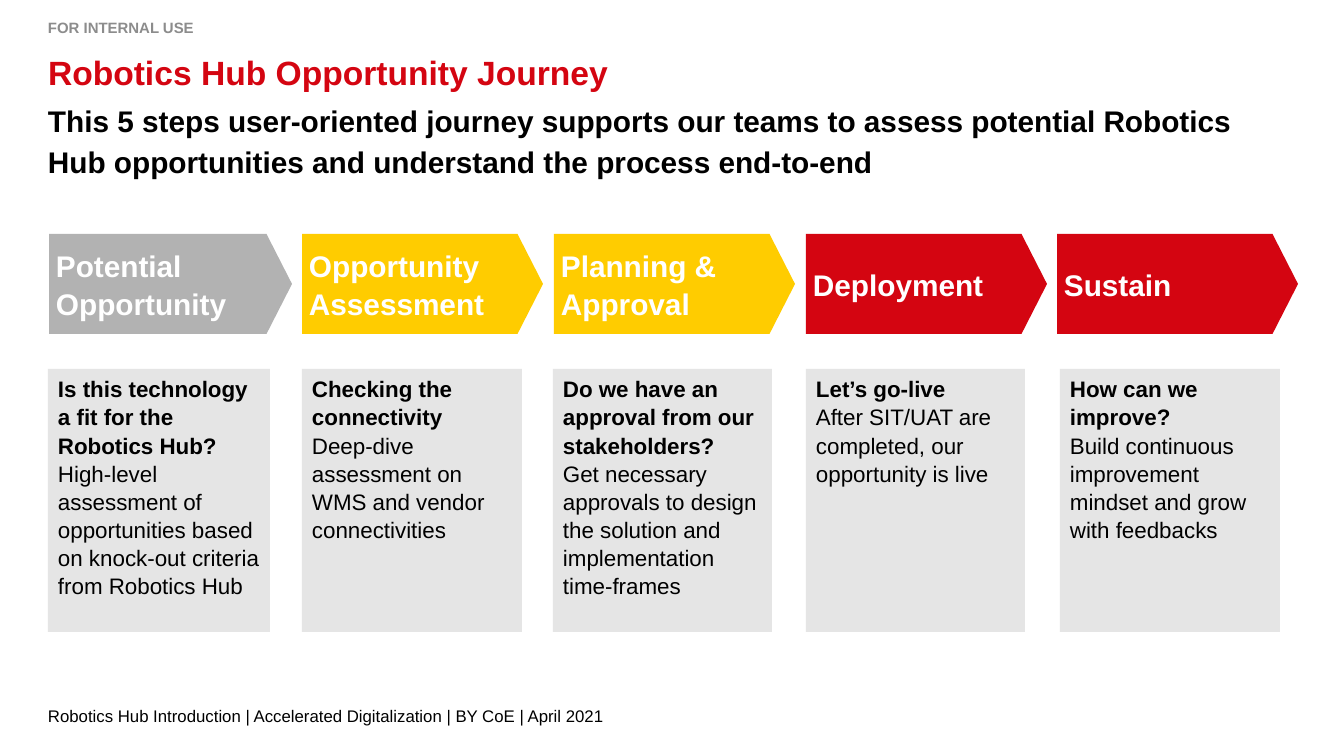
from pptx import Presentation
from pptx.dml.color import RGBColor
from pptx.enum.shapes import MSO_SHAPE
from pptx.enum.text import MSO_ANCHOR, MSO_AUTO_SIZE, PP_ALIGN
from pptx.util import Pt

RECTANGLE, PENTAGON = MSO_SHAPE.RECTANGLE, MSO_SHAPE.PENTAGON
TOP, MIDDLE = MSO_ANCHOR.TOP, MSO_ANCHOR.MIDDLE
LEFT = PP_ALIGN.LEFT
NO_FIT = MSO_AUTO_SIZE.NONE

PX = 914400 / 100.8
COLOURS = {
    "red": "D40511",
    "yellow": "FFCC00",
    "grey": "B2B2B2",
    "card": "E5E5E5",
    "tag": "8C8C8C",
    "black": "000000",
    "white": "FFFFFF",
}


def px(length):
    return round(length * PX)


def write(box, lines, size, colour, anchor=TOP, inset=(0, 0), spacing=1.0, wrap=True):
    """Fill a box with (text, bold) lines, one paragraph each."""
    frame = box.text_frame
    side, end = map(px, inset)
    frame_format = {
        "word_wrap": wrap,
        "auto_size": NO_FIT,
        "vertical_anchor": anchor,
        "margin_left": side,
        "margin_right": side,
        "margin_top": end,
        "margin_bottom": end,
    }
    for name, value in frame_format.items():
        setattr(frame, name, value)
    for index, (text, bold) in enumerate(lines):
        para = frame.paragraphs[0] if index == 0 else frame.add_paragraph()
        para.alignment = LEFT
        para.line_spacing = spacing
        span = para.add_run()
        span.text = text
        font_format = {"name": "Arial", "size": Pt(size), "bold": bold}
        for name, value in font_format.items():
            setattr(span.font, name, value)
        span.font.color.rgb = RGBColor.from_string(COLOURS[colour])


deck = Presentation()
deck.slide_width, deck.slide_height = px(1344), px(756)
page = deck.slides.add_slide(deck.slide_layouts[5])

# Title
title = page.shapes.title
title_place = {"left": 48, "top": 52, "width": 1249, "height": 73}
for name, value in title_place.items():
    setattr(title, name, px(value))
write(title, [("Robotics Hub Opportunity Journey", True)], 24, "red")

# Tag, subtitle and footer: place, text, bold, format
texts = [
    ((48, 17, 402, 21), "FOR INTERNAL USE", True,
     {"size": 10.7, "colour": "tag", "anchor": MIDDLE, "wrap": False}),
    ((48, 98, 1247, 52),
     "This 5 steps user-oriented journey supports our teams to assess potential "
     "Robotics Hub opportunities and understand the process end-to-end", True,
     {"size": 21.3, "colour": "black", "spacing": 1.14}),
    ((48, 706, 1193, 20),
     "Robotics Hub Introduction | Accelerated Digitalization | BY CoE | April 2021", False,
     {"size": 12, "colour": "black", "anchor": MIDDLE}),
]
for place, text, bold, text_format in texts:
    box = page.shapes.add_textbox(*map(px, place))
    write(box, [(text, bold)], **text_format)

# Journey steps: arrow (left, width), card (left, width), colour, name lines, question, answer
steps = [
    ((49, 243), (48, 222), "grey", ["Potential Opportunity"],
     "Is this technology a fit for the Robotics Hub?",
     "High-level assessment of opportunities based on knock-out criteria from Robotics Hub"),
    ((302, 241), (302, 220), "yellow", ["Opportunity", "Assessment"],
     "Checking the connectivity",
     "Deep-dive assessment on WMS and vendor connectivities"),
    ((554, 241), (553, 219), "yellow", ["Planning & Approval"],
     "Do we have an approval from our stakeholders?",
     "Get necessary approvals to design the solution and implementation time-frames"),
    ((806, 241), (806, 219), "red", ["Deployment"],
     "Let’s go-live",
     "After SIT/UAT are completed, our opportunity is live"),
    ((1057, 241), (1060, 220), "red", ["Sustain"],
     "How can we improve?",
     "Build continuous improvement mindset and grow with feedbacks"),
]
for arrow_span, card_span, colour, names, question, answer in steps:
    arrow_lines = [(name, True) for name in names]
    card_lines = [(question, True), (answer, False)]
    parts = [
        (PENTAGON, arrow_span, 234, 100, colour, arrow_lines,
         {"size": 21.3, "colour": "white", "anchor": MIDDLE, "inset": (7, 13)}),
        (RECTANGLE, card_span, 369, 263, "card", card_lines,
         {"size": 16, "colour": "black", "inset": (10, 5)}),
    ]
    for kind, (left, width), top, height, fill, lines, text_format in parts:
        shape = page.shapes.add_shape(kind, px(left), px(top), px(width), px(height))
        shape.shadow.inherit = False
        shape.fill.solid()
        shape.fill.fore_color.rgb = RGBColor.from_string(COLOURS[fill])
        shape.line.fill.background()
        if kind == PENTAGON:
            shape.adjustments[0] = 0.255
        write(shape, lines, spacing=1.05, **text_format)

deck.save("out.pptx")
